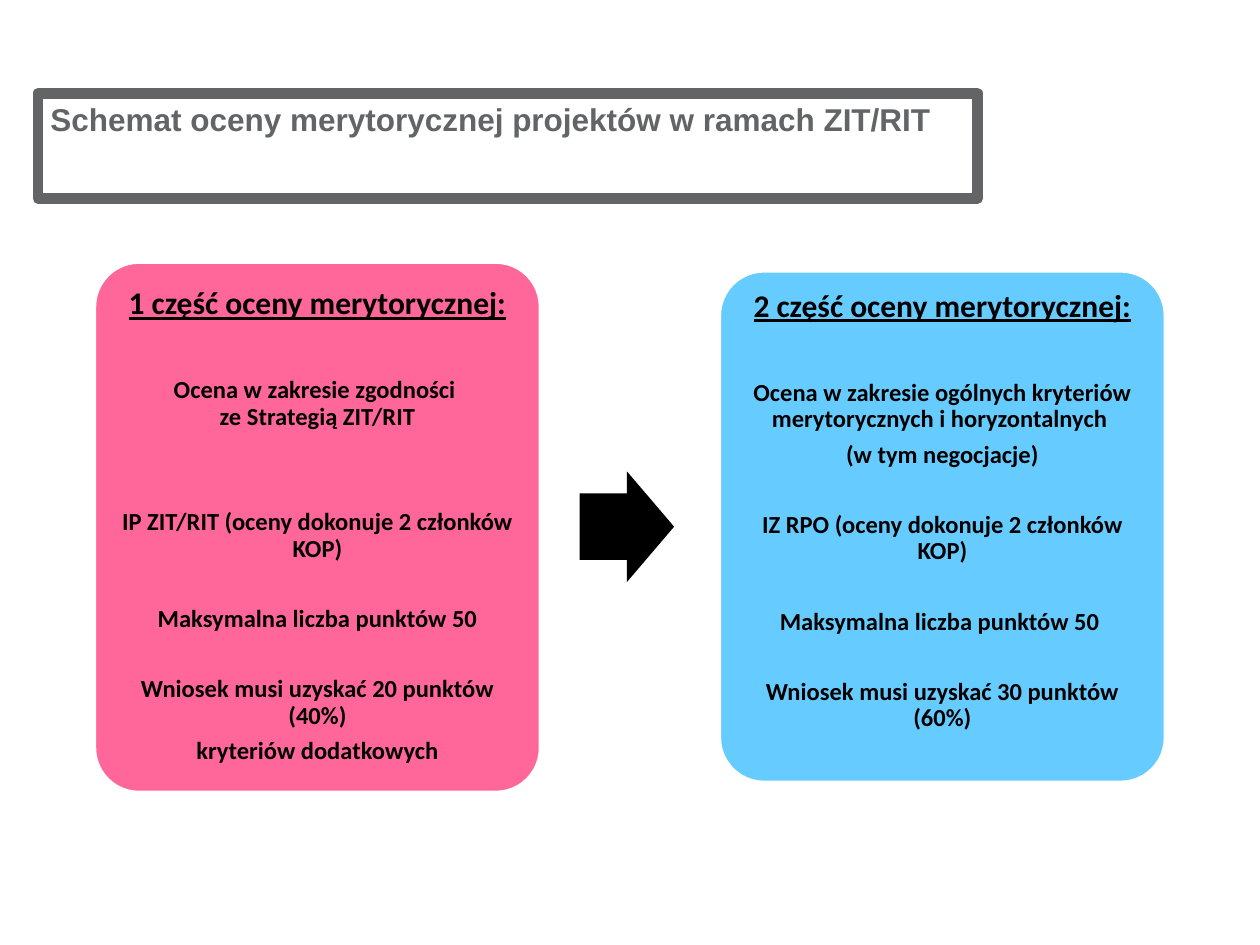
from pptx import Presentation
from pptx.dml.color import RGBColor
from pptx.enum.shapes import MSO_SHAPE as Shape
from pptx.enum.text import MSO_ANCHOR as Anchor, MSO_AUTO_SIZE as AutoSize, PP_ALIGN as Align
from pptx.util import Inches, Pt

PINK = RGBColor(0xFF, 0x66, 0x99)
BLUE = RGBColor(0x66, 0xCC, 0xFF)
GRAY = RGBColor(0x63, 0x64, 0x66)
BLACK = RGBColor(0, 0, 0)
WHITE = RGBColor(0xFF, 0xFF, 0xFF)

TIGHT, SECTION, WIDE, AFTER_HEADING = 5, 25, 45, 32

PART_ONE = [
    ("Ocena w zakresie zgodności \nze Strategią ZIT/RIT", WIDE),
    ("IP ZIT/RIT (oceny dokonuje 2 członków KOP)", SECTION),
    ("Maksymalna liczba punktów 50", SECTION),
    ("Wniosek musi uzyskać 20 punktów (40%)", TIGHT),
    ("kryteriów dodatkowych", 0),
]
PART_TWO = [
    ("Ocena w zakresie ogólnych kryteriów merytorycznych i horyzontalnych ", TIGHT),
    ("(w tym negocjacje)", SECTION),
    ("IZ RPO (oceny dokonuje 2 członków KOP)", SECTION),
    ("Maksymalna liczba punktów 50 ", SECTION),
    ("Wniosek musi uzyskać 30 punktów (60%)", 0),
]


def add_run(paragraph, text, font_name, size, color, underline=False):
    run = paragraph.add_run()
    run.text = text
    font = run.font
    font.name, font.size, font.bold = font_name, Pt(size), True
    font.underline = underline
    font.color.rgb = color


def add_title(slide, text):
    title = slide.shapes.title
    title.left, title.top = Inches(0.3), Inches(0.74)
    title.width, title.height = Inches(7.46), Inches(0.4)
    title.line.color.rgb = GRAY
    title.line.width = Pt(6)
    frame = title.text_frame
    frame.word_wrap = True
    frame.auto_size = AutoSize.SHAPE_TO_FIT_TEXT
    frame.vertical_anchor = Anchor.TOP
    heading = frame.paragraphs[0]
    heading.alignment = Align.LEFT
    add_run(heading, text, "Arial", 18, GRAY)


def add_filled_shape(slide, kind, left, top, width, height, fill):
    shape = slide.shapes.add_shape(
        kind, Inches(left), Inches(top), Inches(width), Inches(height))
    shape.shadow.inherit = False
    shape.fill.solid()
    shape.fill.fore_color.rgb = fill
    return shape


def write_line(paragraph, text, size, gap, underline=False):
    paragraph.alignment = Align.CENTER
    paragraph.line_spacing = 0.9
    paragraph.space_after = Pt(gap)
    for index, part in enumerate(text.split("\n")):
        if index:
            paragraph.add_line_break()
        add_run(paragraph, part, "Calibri", size, BLACK, underline)


def add_stage(slide, left, top, height, fill, inset_top, heading, criteria):
    stage = add_filled_shape(
        slide, Shape.ROUNDED_RECTANGLE, left, top, 3.54, height, fill)
    stage.adjustments[0] = 0.1
    stage.line.color.rgb = WHITE
    stage.line.width = Pt(2)
    frame = stage.text_frame
    frame.word_wrap = True
    frame.vertical_anchor = Anchor.TOP
    frame.margin_left = frame.margin_right = Inches(0.07)
    frame.margin_top, frame.margin_bottom = Inches(inset_top), Inches(0)
    write_line(frame.paragraphs[0], heading, 18, AFTER_HEADING, underline=True)
    for text, gap in criteria:
        write_line(frame.add_paragraph(), text, 14, gap)


def add_stage_arrow(slide):
    arrow = add_filled_shape(
        slide, Shape.RIGHT_ARROW, 4.6, 3.74, 0.75, 0.88, BLACK)
    arrow.adjustments[0] = 0.6
    arrow.adjustments[1] = 0.5
    arrow.line.fill.background()


def main():
    presentation = Presentation()
    presentation.slide_width, presentation.slide_height = Inches(10), Inches(7.5)
    slide = presentation.slides.add_slide(presentation.slide_layouts[5])
    add_stage(slide, 0.75, 2.08, 4.21, PINK, 0.1,
              "1 część oceny merytorycznej:", PART_ONE)
    add_stage_arrow(slide)
    add_stage(slide, 5.71, 2.15, 4.06, BLUE, 0.05,
              "2 część oceny merytorycznej:", PART_TWO)
    add_title(slide, "Schemat oceny merytorycznej projektów w ramach ZIT/RIT")
    presentation.save("out.pptx")


if __name__ == "__main__":
    main()
